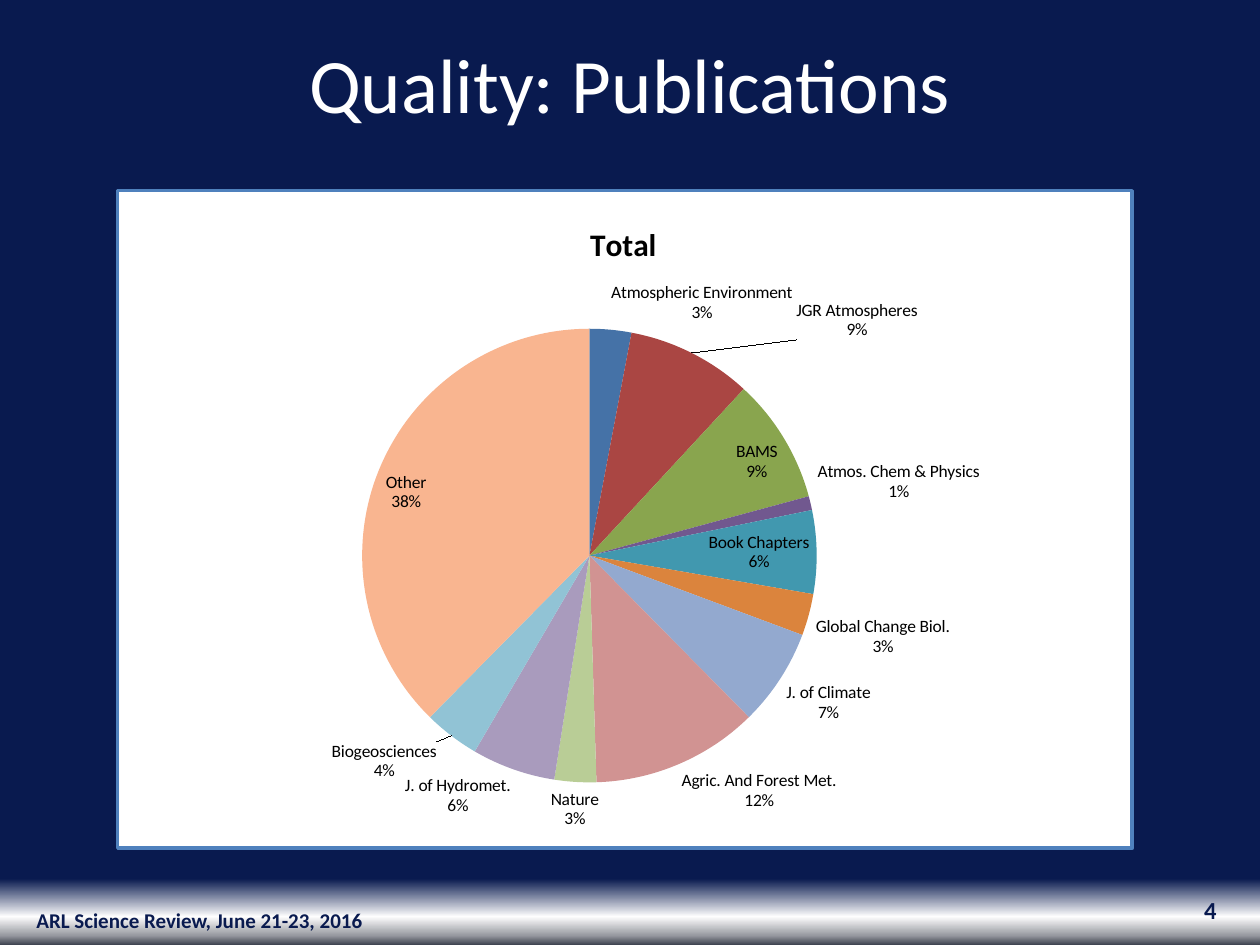
from lxml import etree
from pptx import Presentation
from pptx.chart.data import CategoryChartData
from pptx.dml.color import RGBColor
from pptx.enum.chart import XL_CHART_TYPE, XL_LABEL_POSITION
from pptx.enum.text import MSO_ANCHOR, PP_ALIGN
from pptx.oxml import parse_xml
from pptx.oxml.ns import nsdecls, qn
from pptx.util import Emu, Pt

PIE = XL_CHART_TYPE.PIE
INSIDE, OUTSIDE = XL_LABEL_POSITION.INSIDE_END, XL_LABEL_POSITION.OUTSIDE_END
CENTER, RIGHT = PP_ALIGN.CENTER, PP_ALIGN.RIGHT
TOP, MIDDLE = MSO_ANCHOR.TOP, MSO_ANCHOR.MIDDLE
TITLE_ONLY = 5
PX_PER_INCH = 126
FONT = "Calibri"
NAVY, WHITE, BLACK, BORDER = "091A4F", "FFFFFF", "000000", "4F81BD"

BACKGROUND_STOPS = [(93, NAVY), (97, "FEFEFE"), (99, "9799A0"), (100, "3C414E")]

# Category, percentage, slice colour, label position
PUBLICATIONS = [
    ("Atmospheric Environment", 3, "4572A7", OUTSIDE),
    ("JGR Atmospheres", 9, "AA4643", OUTSIDE),
    ("BAMS", 9, "89A54E", INSIDE),
    ("Atmos. Chem & Physics", 1, "71588F", OUTSIDE),
    ("Book Chapters", 6, "4198AF", INSIDE),
    ("Global Change Biol.", 3, "DB843D", OUTSIDE),
    ("J. of Climate", 7, "93A9CF", OUTSIDE),
    ("Agric. And Forest Met.", 12, "D19392", OUTSIDE),
    ("Nature", 3, "B9CD96", OUTSIDE),
    ("J. of Hydromet.", 6, "A99BBD", OUTSIDE),
    ("Biogeosciences", 4, "91C3D5", OUTSIDE),
    ("Other", 38, "F9B590", INSIDE),
]
LABEL_SHIFTS = {"JGR Atmospheres": (0.1, -0.01), "Biogeosciences": (-0.01, 0)}


def px(length):
    return Emu(round(length * 914400 / PX_PER_INCH))


def color(hex_string):
    return RGBColor.from_string(hex_string)


def format_font(font, size, hex_color, bold=False):
    font.name = FONT
    font.size = Pt(size)
    font.bold = bold
    font.color.rgb = color(hex_color)


def write_text(shape, text, size, hex_color, bold=False, align=CENTER, anchor=MIDDLE):
    frame = shape.text_frame
    frame.word_wrap = True
    frame.vertical_anchor = anchor
    paragraph = frame.paragraphs[0]
    paragraph.alignment = align
    run = paragraph.add_run()
    run.text = text
    format_font(run.font, size, hex_color, bold)


def add_text(slide, box, text, **text_format):
    write_text(slide.shapes.add_textbox(*map(px, box)), text, **text_format)


def set_title(slide, box, text, **text_format):
    title = slide.shapes.title
    title.left, title.top, title.width, title.height = map(px, box)
    write_text(title, text, **text_format)


def set_background(slide):
    fill = slide.background.fill
    fill.gradient()
    fill.gradient_angle = 270
    stops = slide.element.xpath(".//a:gsLst")[0]
    for stop in list(stops):
        stops.remove(stop)
    for percent, hex_color in BACKGROUND_STOPS:
        stop = etree.SubElement(stops, qn("a:gs"), pos=str(percent * 1000))
        etree.SubElement(stop, qn("a:srgbClr"), val=hex_color)


def place_after(element, **settings):
    """Put a manual chart layout right after the element."""
    following = element.getnext()
    if following is not None and following.tag == qn("c:layout"):
        following.getparent().remove(following)
    layout = parse_xml(f"<c:layout {nsdecls('c')}><c:manualLayout/></c:layout>")
    for name, value in settings.items():
        etree.SubElement(layout[0], qn(f"c:{name}"), val=str(value))
    element.addnext(layout)


def frame_chart(chart):
    chart.element.find(qn("c:chart")).addnext(parse_xml(
        f"<c:spPr {nsdecls('c', 'a')}>"
        f'<a:solidFill><a:srgbClr val="{WHITE}"/></a:solidFill>'
        f'<a:ln w="{Pt(2)}"><a:solidFill><a:srgbClr val="{BORDER}"/></a:solidFill></a:ln>'
        "</c:spPr>"))


def label_slices(series):
    labels = series.data_labels
    labels.show_value = False
    labels.show_category_name = labels.show_percentage = True
    for point_index, (name, _, _, position) in enumerate(PUBLICATIONS):
        series.points[point_index].data_label.position = position
        label = series.data_labels._element.xpath(f"c:dLbl[c:idx/@val='{point_index}']")[0]
        for tag, value in (("showVal", "0"), ("showCatName", "1"), ("showPercent", "1")):
            label.find(qn(f"c:{tag}")).set("val", value)
        if name in LABEL_SHIFTS:
            x, y = LABEL_SHIFTS[name]
            place_after(label.find(qn("c:idx")), x=x, y=y)
    for last_switch in series.data_labels._element.xpath(".//c:showBubbleSize"):
        separator = etree.Element(qn("c:separator"))
        separator.text = "\n"
        last_switch.addnext(separator)


def add_publications_pie(slide, box):
    data = CategoryChartData()
    data.categories = [row[0] for row in PUBLICATIONS]
    data.add_series("Series 1", [row[1] for row in PUBLICATIONS])
    chart = slide.shapes.add_chart(PIE, *map(px, box), data).chart
    chart.has_legend = False
    format_font(chart.font, 10, BLACK)
    frame_chart(chart)

    chart.has_title = True
    title = chart.chart_title
    write_text(title, "Total", size=18, hex_color=BLACK, bold=True)
    place_after(title._element.find(qn("c:tx")), xMode="edge", yMode="edge", x=0.46, y=0.04)

    plot = chart.plots[0]
    plot_layout = {"layoutTarget": "inner", "xMode": "edge", "yMode": "edge",
                   "x": 0.24, "y": 0.21, "w": 0.45, "h": 0.69}
    plot_area = chart.element.xpath(".//c:plotArea")[0]
    for layout in plot_area.findall(qn("c:layout")):
        plot_area.remove(layout)
    marker = etree.Element(qn("c:layout"))
    plot_area.insert(0, marker)
    place_after(marker, **plot_layout)
    plot_area.remove(marker)

    series = plot.series[0]
    for point_index, (_, _, hex_color, _) in enumerate(PUBLICATIONS):
        fill = series.points[point_index].format.fill
        fill.solid()
        fill.fore_color.rgb = color(hex_color)
    label_slices(series)


def main():
    presentation = Presentation()
    presentation.slide_width, presentation.slide_height = px(1260), px(945)
    slide = presentation.slides.add_slide(presentation.slide_layouts[TITLE_ONLY])
    set_background(slide)
    set_title(slide, (0, 30, 1260, 106), "Quality: Publications",
              size=44, hex_color=WHITE, anchor=TOP)
    add_publications_pie(slide, (116, 189, 1018, 661))
    add_text(slide, (0, 895, 399, 50), "ARL Science Review, June 21-23, 2016",
             size=12, hex_color=NAVY, bold=True)
    add_text(slide, (935, 885, 294, 50), "4",
             size=14, hex_color=NAVY, bold=True, align=RIGHT)
    presentation.save("out.pptx")


if __name__ == "__main__":
    main()
